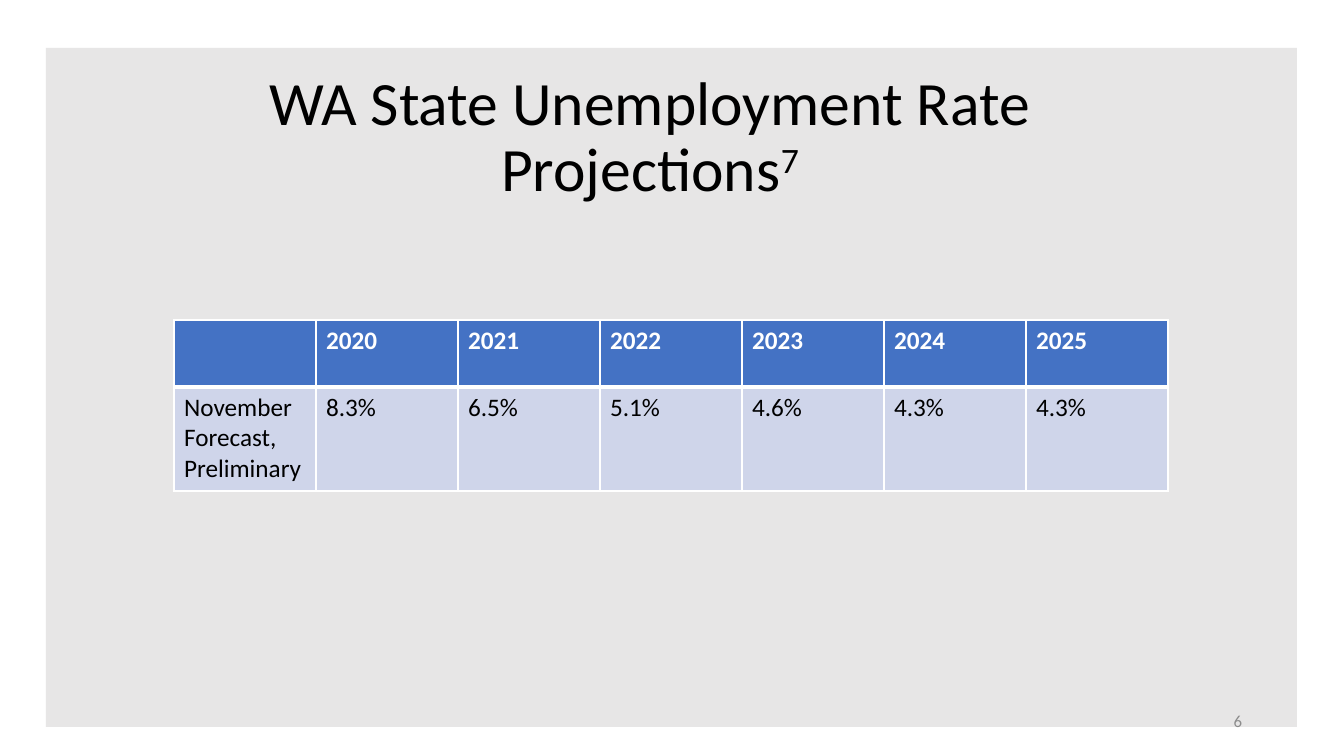
from lxml import etree
from pptx import Presentation, util as u
from pptx.dml.color import RGBColor
from pptx.enum import shapes, text
from pptx.oxml import ns

TITLE = "WA State Unemployment Rate Projections"
FOOTNOTE_MARK = "7"
PAGE_NUMBER = "6"
FORECAST = [
    ["", "2020", "2021", "2022", "2023", "2024", "2025"],
    ["November Forecast, Preliminary", "8.3%", "6.5%", "5.1%", "4.6%", "4.3%", "4.3%"],
]

THEME = {
    "font": "Calibri",
    "panel": "E7E6E6",
    "border": "FFFFFF",
    "header_fill": "4472C4",
    "body_fill": "CFD5EA",
    "title": {"size": 44, "color": "000000", "bold": False},
    "header": {"size": 18, "color": "FFFFFF", "bold": True},
    "body": {"size": 18, "color": "000000", "bold": False},
    "page": {"size": 12, "color": "8C8C8C", "bold": False},
}

# Lengths in px
SLIDE = (1344, 756)
PANEL_BOX = (46, 48, 1251, 679)
TITLE_BOX = (146, 68, 1008, 142)
PAGE_BOX = (950, 701, 302, 40)
TABLE_LEFT, TABLE_TOP = 174, 320
COLUMN_WIDTH = 142
ROW_HEIGHTS = (67, 104)
THIN, THICK = 1, 3  # border widths in points


def px(length):
    return round(length * u.Inches(1) / 100.8)


def add_run(paragraph, wording, style):
    run = paragraph.add_run()
    run.text = wording
    look = THEME[style]
    run.font.color.rgb = RGBColor.from_string(look["color"])
    settings = {"name": THEME["font"], "size": u.Pt(look["size"]), "bold": look["bold"]}
    for name, value in settings.items():
        setattr(run.font, name, value)
    return run


def add_text(slide, box, anchor, align):
    """Add a wrapping text box and return its first paragraph."""
    frame = slide.shapes.add_textbox(*map(px, box)).text_frame
    frame.word_wrap = True
    frame.vertical_anchor = anchor
    paragraph = frame.paragraphs[0]
    paragraph.alignment = align
    return paragraph


def add_borders(cell, widths):
    properties = cell._tc.get_or_add_tcPr()
    for side, width in widths.items():
        line = etree.SubElement(properties, ns.qn(f"a:ln{side}"), w=str(u.Pt(width)))
        fill = etree.SubElement(line, ns.qn("a:solidFill"))
        etree.SubElement(fill, ns.qn("a:srgbClr"), val=THEME["border"])


def add_forecast(slide):
    columns = len(FORECAST[0])
    box = (TABLE_LEFT, TABLE_TOP, columns * COLUMN_WIDTH, sum(ROW_HEIGHTS))
    table = slide.shapes.add_table(len(FORECAST), columns, *map(px, box)).table
    for column in table.columns:
        column.width = px(COLUMN_WIDTH)
    for row_index, (entries, height) in enumerate(zip(FORECAST, ROW_HEIGHTS)):
        style = "body" if row_index else "header"
        top, bottom = (THICK, THIN) if row_index else (THIN, THICK)
        table.rows[row_index].height = px(height)
        for column_index, entry in enumerate(entries):
            cell = table.cell(row_index, column_index)
            add_borders(cell, {"L": THIN, "R": THIN, "T": top, "B": bottom})
            cell.fill.solid()
            cell.fill.fore_color.rgb = RGBColor.from_string(THEME[f"{style}_fill"])
            if entry:
                add_run(cell.text_frame.paragraphs[0], entry, style)


def main():
    deck = Presentation()
    deck.slide_width, deck.slide_height = map(px, SLIDE)
    slide = deck.slides.add_slide(deck.slide_layouts[6])

    panel = slide.shapes.add_shape(shapes.MSO_SHAPE.RECTANGLE, *map(px, PANEL_BOX))
    panel.shadow.inherit = False
    panel.fill.solid()
    panel.fill.fore_color.rgb = RGBColor.from_string(THEME["panel"])
    panel.line.fill.background()

    title = add_text(slide, TITLE_BOX, text.MSO_ANCHOR.BOTTOM, text.PP_ALIGN.CENTER)
    title.line_spacing = 0.9
    add_run(title, TITLE, "title")
    mark = add_run(title, FOOTNOTE_MARK, "title")
    mark._r.get_or_add_rPr().set("baseline", "30000")

    add_forecast(slide)

    page = add_text(slide, PAGE_BOX, text.MSO_ANCHOR.MIDDLE, text.PP_ALIGN.RIGHT)
    add_run(page, PAGE_NUMBER, "page")

    deck.save("out.pptx")


if __name__ == "__main__":
    main()
